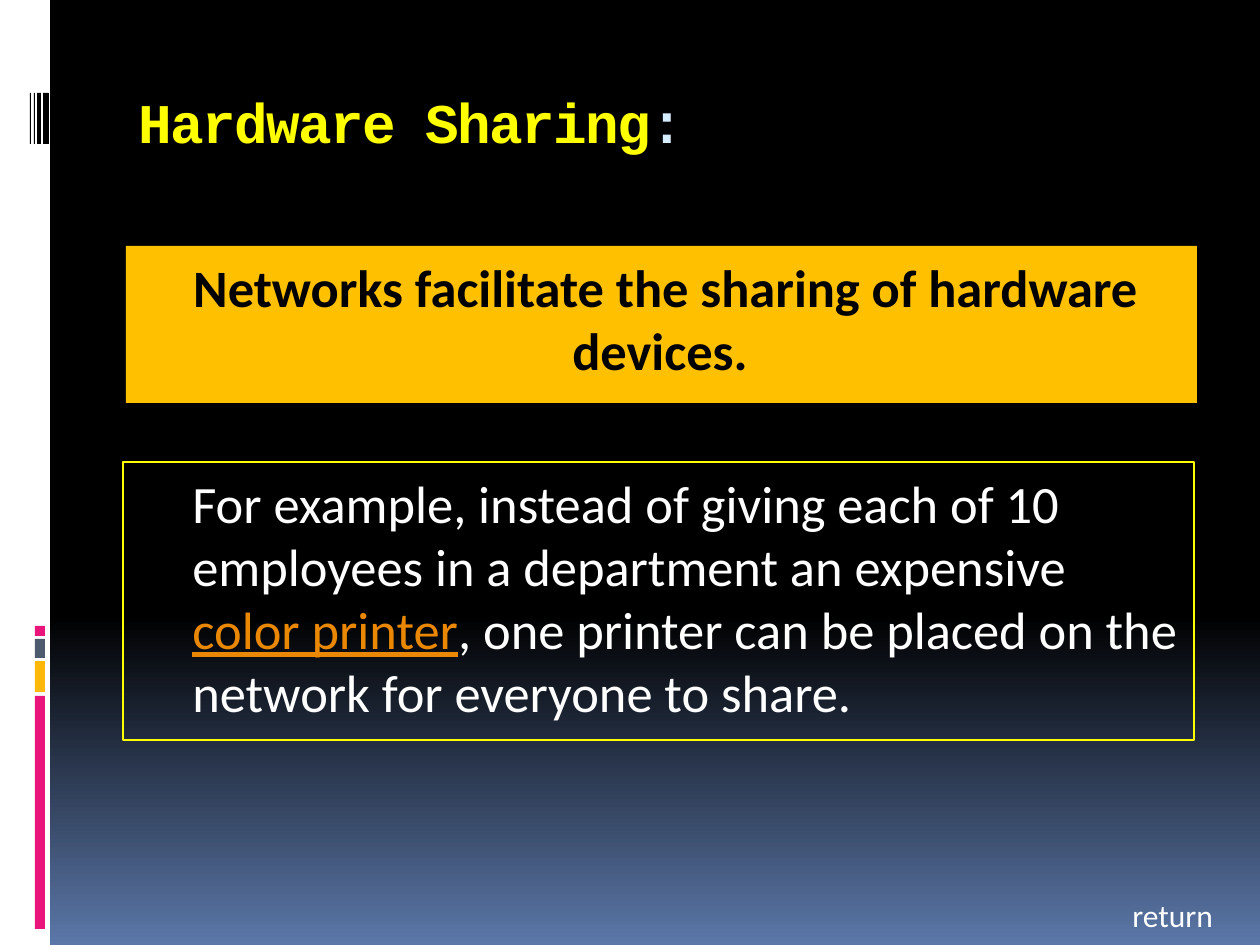
from dataclasses import dataclass

from pptx import Presentation
from pptx.dml.color import RGBColor
from pptx.enum.shapes import MSO_SHAPE as Shape
from pptx.enum.text import MSO_ANCHOR as Anchor, MSO_AUTO_SIZE as AutoSize, PP_ALIGN as Align
from pptx.util import Emu, Pt

EMU_PER_PX = 914400 / 126


def px(length):
    return Emu(round(length * EMU_PER_PX))


def rgb(code):
    return RGBColor.from_string(code)


@dataclass(frozen=True)
class Theme:
    black: str = "000000"
    white: str = "FFFFFF"
    blue: str = "5B77A8"
    pink: str = "EA157A"
    orange: str = "FEB80A"
    slate: str = "4E5B6F"
    yellow: str = "FFFF00"
    pale: str = "D6ECFF"
    amber: str = "FFC000"
    link: str = "EB8803"
    title_font: str = "Courier New"
    body_font: str = "Calibri"
    title_size: int = 32
    body_size: int = 30
    small_size: int = 18


class SlideBuilder:
    def __init__(self, presentation, theme):
        self.theme = theme
        self.slide = presentation.slides.add_slide(presentation.slide_layouts[5])

    def background(self, stops):
        fill = self.slide.background.fill
        fill.gradient()
        fill.gradient_angle = 270
        for stop, (position, color) in zip(fill.gradient_stops, stops):
            stop.position = position
            stop.color.rgb = rgb(color)

    def box(self, left, top, width, height, fill=None, line=None):
        shape = self.slide.shapes.add_shape(
            Shape.RECTANGLE, px(left), px(top), px(width), px(height))
        shape.shadow.inherit = False
        if fill:
            shape.fill.solid()
            shape.fill.fore_color.rgb = rgb(fill)
        else:
            shape.fill.background()
        if line:
            shape.line.color.rgb = rgb(line)
            shape.line.width = Pt(0.75)
        else:
            shape.line.fill.background()
        return shape

    def title(self, left, top, width, height, runs):
        shape = self.slide.shapes.title
        place = {"left": left, "top": top, "width": width, "height": height}
        for name, value in place.items():
            setattr(shape, name, px(value))
        style = {"name": self.theme.title_font, "size": Pt(self.theme.title_size), "bold": True}
        self.fill_text(shape, runs, style, inset=17)
        for run in shape.text_frame.paragraphs[0].runs:
            run._r.get_or_add_rPr().set("spc", "-100")

    def text(self, left, top, width, height, runs, size):
        shape = self.slide.shapes.add_textbox(px(left), px(top), px(width), px(height))
        self.fill_text(shape, runs, self.body_style(size))

    def panel(self, left, top, width, height, runs, indent, align=Align.LEFT,
              bold=False, fill=None, line=None):
        shape = self.box(left, top, width, height, fill, line)
        style = self.body_style(self.theme.body_size) | {"bold": bold}
        self.fill_text(shape, runs, style, align, inset=9, indent=indent, before=7)

    def body_style(self, size):
        return {"name": self.theme.body_font, "size": Pt(size)}

    def fill_text(self, shape, runs, style, align=Align.LEFT, inset=6, indent=0, before=0):
        frame = shape.text_frame
        layout = {"word_wrap": True, "auto_size": AutoSize.NONE,
                  "vertical_anchor": Anchor.TOP, "margin_top": px(inset)}
        for name, value in layout.items():
            setattr(frame, name, value)
        paragraph = frame.paragraphs[0]
        paragraph.alignment = align
        paragraph.space_before = Pt(before)
        properties = paragraph._p.get_or_add_pPr()
        properties.set("marL", str(px(indent)))
        properties.set("indent", "0")
        for words, color, *underline in runs:
            run = paragraph.add_run()
            run.text = words
            for name, value in (style | {"underline": bool(underline)}).items():
                setattr(run.font, name, value)
            run.font.color.rgb = rgb(color)


def main():
    theme = Theme()
    presentation = Presentation()
    presentation.slide_width = px(1260)
    presentation.slide_height = px(945)

    builder = SlideBuilder(presentation, theme)
    builder.background([(0.65, theme.black), (1, theme.blue)])
    builder.box(0, 0, 50, 945, theme.white)
    for top, height, color in [(696, 233, theme.pink), (661, 31, theme.orange),
                               (639, 19, theme.slate), (626, 10, theme.pink)]:
        builder.box(35, top, 10, height, color)
    for left, width in [(43, 6), (37, 4), (34, 1), (30, 1)]:
        builder.box(left, 93, width, 51, theme.black)

    builder.title(126, 70, 1071, 126,
                  [("Hardware Sharing", theme.yellow), (":", theme.pale)])
    builder.panel(126, 246, 1071, 157,
                  [("Networks facilitate the sharing of hardware devices. ", theme.black)],
                  indent=9, align=Align.CENTER, bold=True, fill=theme.amber)
    builder.text(1120, 890, 126, 50, [("return", theme.white)], theme.small_size)
    builder.panel(123, 462, 1071, 278, [
        ("For example, instead of giving each of 10 employees in a department an expensive ",
         theme.white),
        ("color printer", theme.link, "underlined"),
        (", one printer can be placed on the network for everyone to share.", theme.white),
    ], indent=57, line=theme.yellow)

    presentation.save("out.pptx")


if __name__ == "__main__":
    main()
